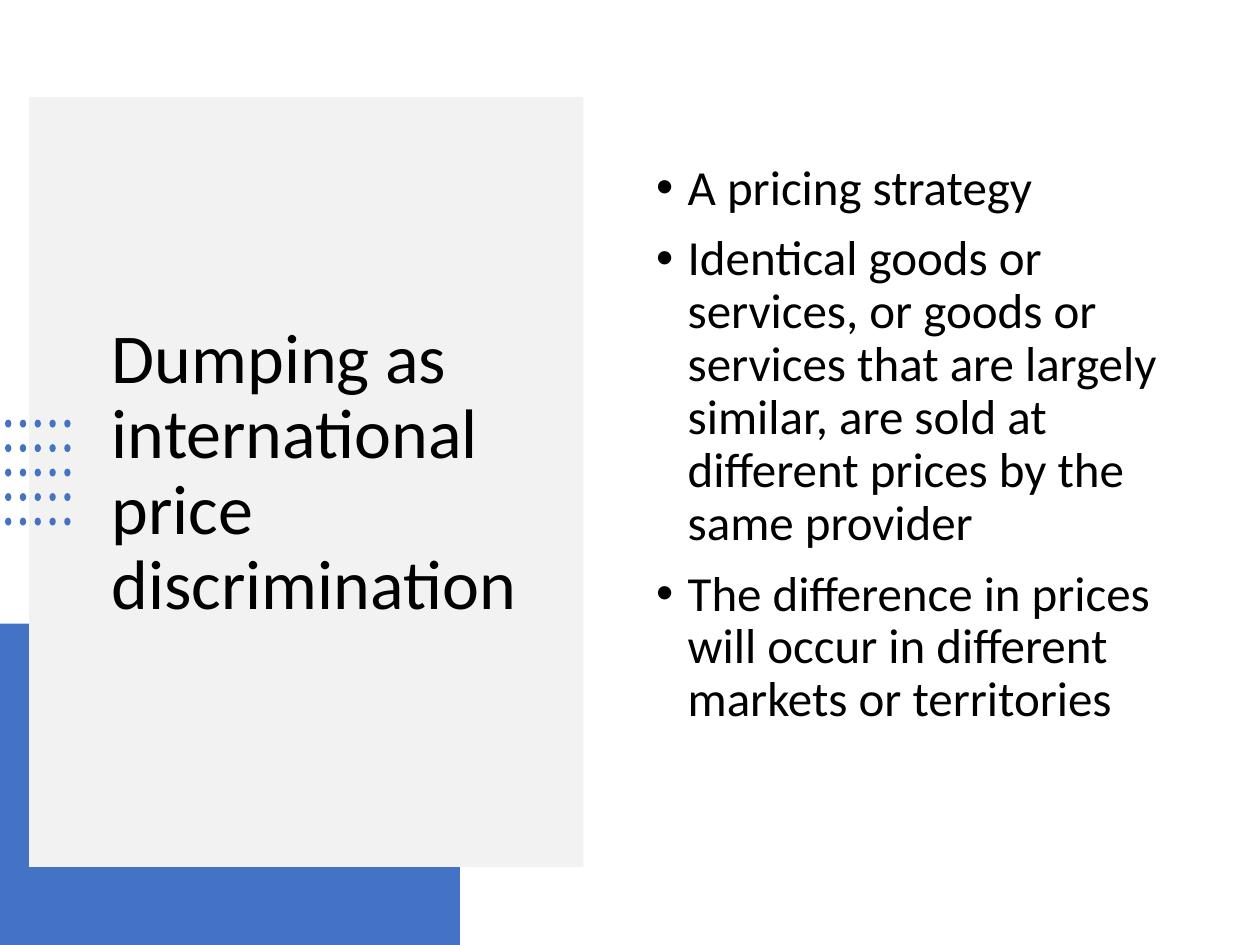
from dataclasses import dataclass
from itertools import product

from lxml.etree import SubElement
from pptx import Presentation
from pptx.dml.color import RGBColor
from pptx.enum.shapes import MSO_SHAPE
from pptx.enum.text import MSO_ANCHOR
from pptx.oxml.ns import qn
from pptx.util import Pt

COLORS = {"accent": "4472C4", "panel": "F2F2F2", "text": "000000"}
FONT = "Calibri"


@dataclass(frozen=True)
class Box:
    left: float
    top: float
    width: float
    height: float

    def lengths(self) -> tuple[Pt, Pt, Pt, Pt]:
        return Pt(self.left), Pt(self.top), Pt(self.width), Pt(self.height)


CORNER = Box(0, 356.4, 262.8, 183.6)
PANEL = Box(16.6, 55.4, 316.8, 440)
TITLE = Box(56.9, 136.8, 249.1, 267.8)
POINTS = Box(367.9, 59, 335.5, 391)

FIRST_DOT = Box(2.9, 239.8, 3.6, 4.5)
DOT_COUNT = 5
DOT_STEP_X, DOT_STEP_Y = 8.45, 14

TITLE_TEXT = "Dumping as international price discrimination"
POINT_TEXTS = [
    "A pricing strategy",
    "Identical goods or services, or goods or services that are largely "
    "similar, are sold at different prices by the same provider",
    "The difference in prices will occur in different markets or territories",
]


def add_filled(shapes, kind: MSO_SHAPE, box: Box, color: str) -> None:
    shape = shapes.add_shape(kind, *box.lengths())
    shape.shadow.inherit = False
    shape.fill.solid()
    shape.fill.fore_color.rgb = RGBColor.from_string(COLORS[color])
    shape.line.fill.background()


def add_bullet(paragraph, indent: float) -> None:
    properties = paragraph._p.get_or_add_pPr()
    properties.set("marL", str(Pt(indent)))
    properties.set("indent", str(-Pt(indent)))
    SubElement(properties, qn("a:buFont"), typeface="Arial")
    SubElement(properties, qn("a:buChar"), char="•")


def add_text(shapes, box: Box, lines: list[str], *, size: float,
             space_before: float = 0, bullet_indent: float = 0) -> None:
    frame = shapes.add_textbox(*box.lengths()).text_frame
    frame.word_wrap = True
    frame.vertical_anchor = MSO_ANCHOR.MIDDLE
    for index, line in enumerate(lines):
        paragraph = frame.add_paragraph() if index else frame.paragraphs[0]
        paragraph.line_spacing = 0.9
        paragraph.space_before = Pt(space_before)
        if bullet_indent:
            add_bullet(paragraph, bullet_indent)
        run = paragraph.add_run()
        run.text = line
        run.font.name = FONT
        run.font.size = Pt(size)
        run.font.color.rgb = RGBColor.from_string(COLORS["text"])


def add_dot_grid(shapes) -> None:
    dots = shapes.add_group_shape().shapes
    for column, row in product(range(DOT_COUNT), repeat=2):
        dot = Box(FIRST_DOT.left + column * DOT_STEP_X,
                  FIRST_DOT.top + row * DOT_STEP_Y,
                  FIRST_DOT.width, FIRST_DOT.height)
        add_filled(dots, MSO_SHAPE.OVAL, dot, "accent")


def main() -> None:
    presentation = Presentation()
    presentation.slide_width, presentation.slide_height = Pt(720), Pt(540)
    shapes = presentation.slides.add_slide(presentation.slide_layouts[6]).shapes

    add_filled(shapes, MSO_SHAPE.RECTANGLE, CORNER, "accent")
    add_filled(shapes, MSO_SHAPE.RECTANGLE, PANEL, "panel")
    add_text(shapes, TITLE, [TITLE_TEXT], size=40)
    add_dot_grid(shapes)
    add_text(shapes, POINTS, POINT_TEXTS, size=28, space_before=10, bullet_indent=18)

    presentation.save("out.pptx")


if __name__ == "__main__":
    main()
